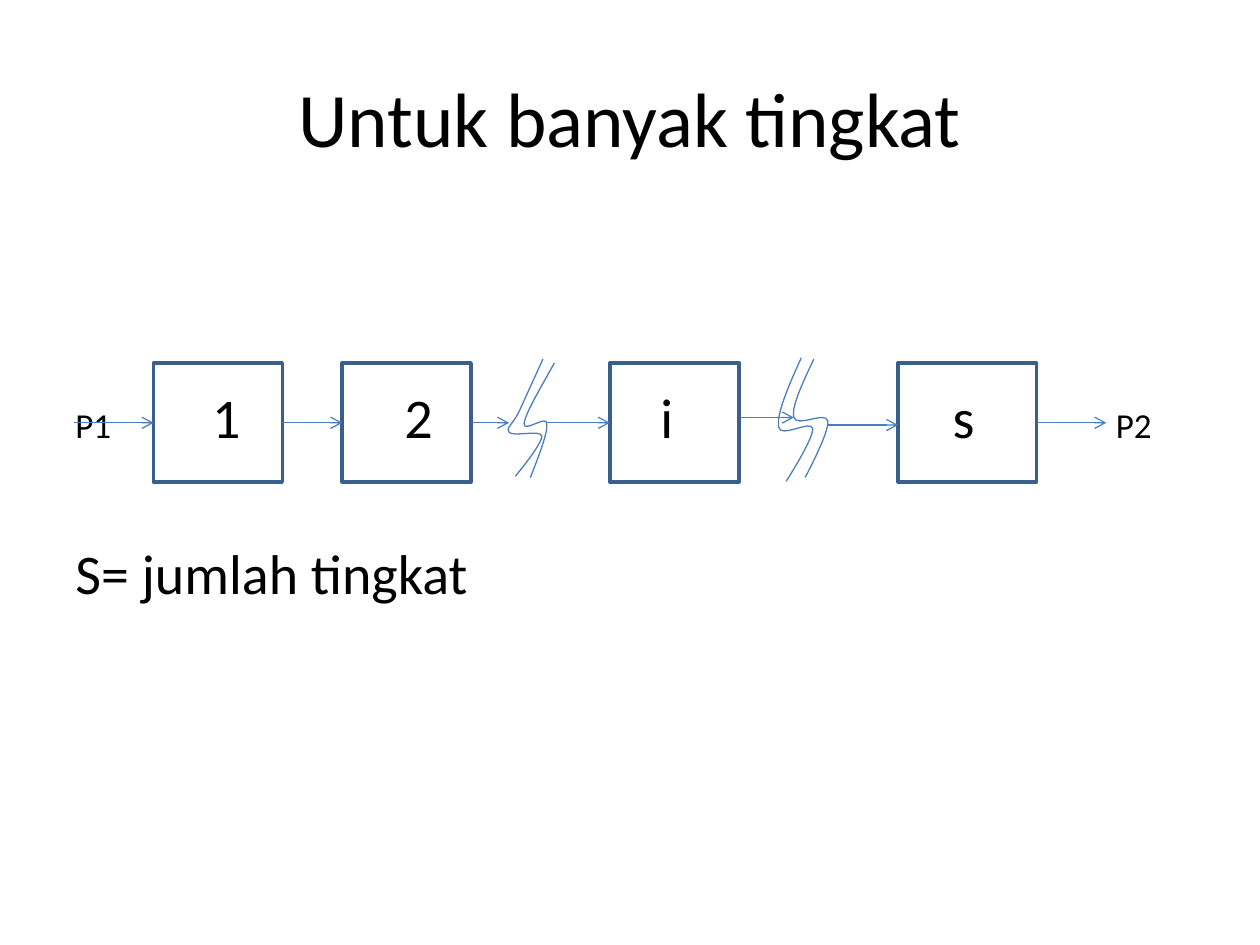
from lxml import etree
from pptx import Presentation
from pptx.dml.color import RGBColor
from pptx.enum import shapes, text
from pptx.oxml import ns
from pptx.util import Pt

BLACK = RGBColor(0x00, 0x00, 0x00)
BOX_LINE = RGBColor(0x3A, 0x5F, 0x8C)
FLOW_LINE = RGBColor(0x4B, 0x7E, 0xBC)
FONT = "Calibri"
LEFT, WIDTH = 36, 648
BOX_TOP, BOX_HEIGHT = 207.4, 68

TITLE = [("Untuk banyak tingkat", 44)]
FLOW = [("P1", 20), ("\t1\t2\ti\ts\t", 32), ("P2", 20)]
NOTE = [("S= jumlah tingkat", 32)]
TABS = [(86.3, "ctr"), (196.1, "ctr"), (338, "ctr"), (507.6, "ctr"), (594.6, "l")]
STAGES = [(87.8, 73.6), (195.6, 73.6), (348.5, 73.8), (513.2, 79.2)]
ARROWS = [
    (42.5, 87.8, 241.6),
    (161.3, 195.6, 241.6),
    (269.3, 290.9, 241.6),
    (312.5, 348.5, 241.6),
    (422.6, 453.6, 238.6),
    (473, 513.2, 242.9),
    (592.6, 632.2, 241.6),
]
BREAKS = [
    ((310.3, 205.2), [
        [(296.6, 235.4)],
        [(293, 242.6), (288.7, 244.8), (290.9, 247)],
        [(293, 249.8), (308.9, 245.5), (309.6, 249.1)],
        [(310.3, 253.4), (294.5, 272.2), (294.5, 272.2)],
    ]),
    ((316.8, 207.4), [
        [(308.9, 221.8), (300.2, 236.2), (299.5, 241.9)],
        [(298.8, 247.7), (312.5, 236.9), (312.5, 241.9)],
        [(313.2, 247), (308.2, 259.9), (303.1, 272.9)],
    ]),
    ((457.9, 204.5), [
        [(450.7, 220.3), (443.5, 236.9), (445, 244.1)],
        [(445.7, 250.6), (463.7, 239.8), (464.4, 244.8)],
        [(465.1, 250.6), (449.3, 275), (449.3, 275)],
    ]),
    ((465.1, 205.2), [
        [(458.6, 218.9), (452.2, 232.6), (453.6, 238.3)],
        [(455, 244.8), (471.6, 234.7), (473, 240.5)],
        [(474.5, 246.2), (460.1, 272.9), (460.1, 272.9)],
    ]),
]


def add_text_frame(s, top, height):
    tf = s.shapes.add_textbox(Pt(LEFT), Pt(top), Pt(WIDTH), Pt(height)).text_frame
    tf.word_wrap = True
    return tf


def add_runs(p, runs):
    for words, size in runs:
        r = p.add_run()
        r.text = words
        r.font.name = FONT
        r.font.size = Pt(size)
        r.font.color.rgb = BLACK


def add_title(s):
    tf = add_text_frame(s, 21.6, 90)
    tf.vertical_anchor = text.MSO_ANCHOR.MIDDLE
    p = tf.paragraphs[0]
    p.alignment = text.PP_ALIGN.CENTER
    add_runs(p, TITLE)


def add_body(s):
    tf = add_text_frame(s, 126, 356.4)
    tf.margin_top = Pt(92.7)
    flow = tf.paragraphs[0]
    tabs = etree.SubElement(flow._p.get_or_add_pPr(), ns.qn("a:tabLst"))
    for position, align in TABS:
        etree.SubElement(tabs, ns.qn("a:tab"), pos=str(Pt(position)), algn=align)
    add_runs(flow, FLOW)
    note = tf.add_paragraph()
    note.space_before = Pt(50.7)
    add_runs(note, NOTE)


def outline(sp, color, width):
    sp.shadow.inherit = False
    sp.fill.background()
    sp.line.color.rgb = color
    sp.line.width = Pt(width)


def add_stage(s, left, width):
    sp = s.shapes.add_shape(shapes.MSO_SHAPE.RECTANGLE, Pt(left), Pt(BOX_TOP),
                            Pt(width), Pt(BOX_HEIGHT))
    outline(sp, BOX_LINE, 2)


def add_break(s, start, segments):
    builder = s.shapes.build_freeform(Pt(start[0]), Pt(start[1]))
    ends = [segment[-1] for segment in segments]
    builder.add_line_segments([(Pt(x), Pt(y)) for x, y in ends], close=False)
    sp = builder.convert_to_shape()
    outline(sp, FLOW_LINE, 0.75)
    for node, segment in zip(list(sp._element.iter(ns.qn("a:lnTo"))), segments):
        if len(segment) == 3:
            curve = etree.Element(ns.qn("a:cubicBezTo"))
            for x, y in segment:
                etree.SubElement(curve, ns.qn("a:pt"), x=str(Pt(x) - sp.left),
                                 y=str(Pt(y) - sp.top))
            node.getparent().replace(node, curve)


def add_arrow(s, start, end, y):
    line = s.shapes.add_connector(shapes.MSO_CONNECTOR.STRAIGHT,
                                  Pt(start), Pt(y), Pt(end), Pt(y))
    line.line.color.rgb = FLOW_LINE
    line.line.width = Pt(0.75)
    etree.SubElement(line.line._get_or_add_ln(), ns.qn("a:tailEnd"), type="arrow")
    etree.SubElement(line._element.spPr, ns.qn("a:effectLst"))


def main():
    prs = Presentation()
    prs.slide_width, prs.slide_height = Pt(720), Pt(540)
    s = prs.slides.add_slide(prs.slide_layouts[6])
    add_title(s)
    add_body(s)
    for stage in STAGES:
        add_stage(s, *stage)
    for mark in BREAKS:
        add_break(s, *mark)
    for arrow in ARROWS:
        add_arrow(s, *arrow)
    prs.save("out.pptx")


if __name__ == "__main__":
    main()
